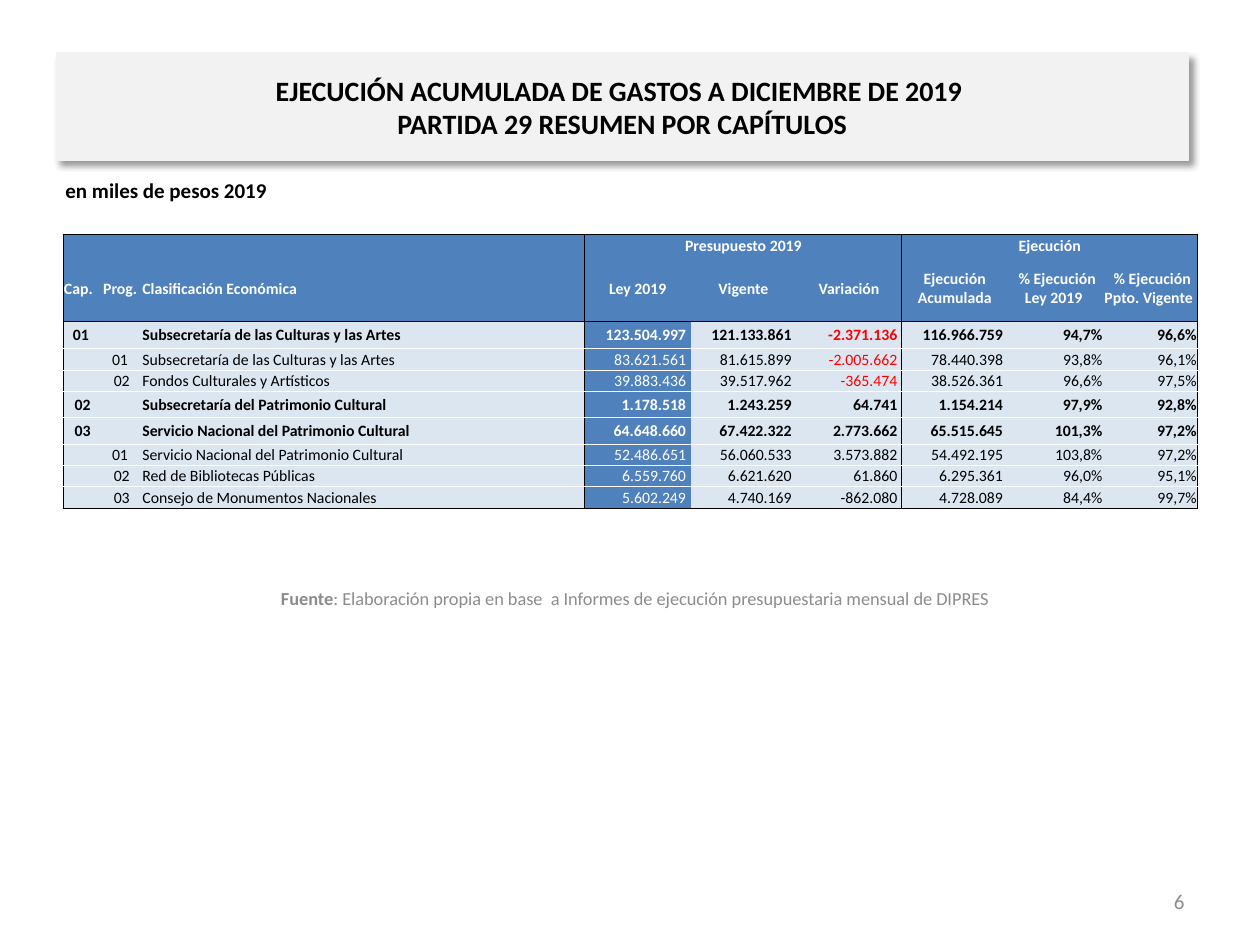
from typing import NamedTuple

from lxml.etree import SubElement, fromstring
from pptx import Presentation
from pptx.dml.color import RGBColor as Rgb
from pptx.enum.text import MSO_ANCHOR as Anchor, MSO_AUTO_SIZE as Fit, PP_ALIGN as Align
from pptx.oxml.ns import qn
from pptx.util import Cm, Pt

FONT = "Calibri"
HEX = {
    "black": "000000", "white": "FFFFFF", "red": "FF0000", "gray": "8C8C8C",
    "band": "F2F2F2", "blue": "4F81BD", "pale": "DCE6F1",
}
WIDTHS = [0.79, 0.79, 8.94, 2.13, 2.13, 2.13, 2.13, 1.93, 1.9]
HEAD_ROWS = [0.43, 1.32]
GROUPS = {3: "Presupuesto 2019", 6: "Ejecución"}
HEADS = ["Cap.", "Prog.", "Clasificación Económica", "Ley 2019", "Vigente", "Variación",
         "Ejecución Acumulada", " % Ejecución Ley 2019 ", " % Ejecución Ppto. Vigente "]
SHADOW = """<a:effectLst xmlns:a="http://schemas.openxmlformats.org/drawingml/2006/main">
<a:outerShdw blurRad="50800" dist="38100" dir="2700000" algn="tl" rotWithShape="0">
<a:srgbClr val="000000"><a:alpha val="40000"/></a:srgbClr></a:outerShdw></a:effectLst>"""


class Item(NamedTuple):
    cap: str
    prog: str
    name: str
    sums: list[str]
    rates: list[str]
    tall: float = 0.43
    red: bool = False


class Note(NamedTuple):
    box: tuple[float, float, float, float]
    texts: list[tuple[str, bool]]
    size: float
    color: str
    align: Align
    anchor: Anchor


ITEMS = [
    Item("01 ", "", "Subsecretaría de las Culturas y las Artes",
         ["123.504.997", "121.133.861", "-2.371.136", "116.966.759"], ["94,7%", "96,6%"], 0.56, True),
    Item("", "01 ", "Subsecretaría de las Culturas y las Artes",
         ["83.621.561", "81.615.899", "-2.005.662", "78.440.398"], ["93,8%", "96,1%"], red=True),
    Item("", "02", "Fondos Culturales y Artísticos",
         ["39.883.436", "39.517.962", "-365.474", "38.526.361"], ["96,6%", "97,5%"], red=True),
    Item("02", "", "Subsecretaría del Patrimonio Cultural",
         ["1.178.518", "1.243.259", "64.741", "1.154.214"], ["97,9%", "92,8%"], 0.53),
    Item("03", "", "Servicio Nacional del Patrimonio Cultural",
         ["64.648.660", "67.422.322", "2.773.662", "65.515.645"], ["101,3%", "97,2%"], 0.53),
    Item("", "01 ", "Servicio Nacional del Patrimonio Cultural",
         ["52.486.651", "56.060.533", "3.573.882", "54.492.195"], ["103,8%", "97,2%"]),
    Item("", "02", "Red de Bibliotecas Públicas",
         ["6.559.760", "6.621.620", "61.860", "6.295.361"], ["96,0%", "95,1%"]),
    Item("", "03", "Consejo de Monumentos Nacionales",
         ["5.602.249", "4.740.169", "-862.080", "4.728.089"], ["84,4%", "99,7%"]),
]
NOTES = [
    Note((18.21, 17.65, 5.92, 1.02), [("6", False)], 12, "gray", Align.RIGHT, Anchor.MIDDLE),
    Note((1.07, 3.45, 22.86, 1.27), [("en miles de pesos 2019", True)], 12, "black",
         Align.LEFT, Anchor.TOP),
    Note((1.68, 11.63, 22.25, 0.84),
         [("Fuente", True),
          (": Elaboración propia en base  a Informes de ejecución presupuestaria mensual de DIPRES", False)],
         10.5, "gray", Align.CENTER, Anchor.MIDDLE),
]


def color(name: str) -> Rgb:
    return Rgb.from_string(HEX[name])


def style(run, size: float, tint: str, bold: bool) -> None:
    font = run.font
    font.name, font.size, font.bold = FONT, Pt(size), bold
    font.color.rgb = color(tint)


def add_title(slide) -> None:
    title = slide.shapes.title
    title.left, title.top, title.width, title.height = map(Cm, (1.14, 1.07, 22.81, 2.16))
    title.fill.solid()
    title.fill.fore_color.rgb = color("band")
    title.line.color.rgb = color("band")
    title.line.width = Pt(0.75)
    title._element.spPr.append(fromstring(SHADOW))
    frame = title.text_frame
    frame.text = "EJECUCIÓN ACUMULADA DE GASTOS A DICIEMBRE DE 2019 \vPARTIDA 29 RESUMEN POR CAPÍTULOS"
    frame.auto_size = Fit.NONE
    frame.vertical_anchor = Anchor.MIDDLE
    para = frame.paragraphs[0]
    para.alignment = Align.CENTER
    for run in para.runs:
        style(run, 16, "black", True)


def add_note(slide, note: Note) -> None:
    frame = slide.shapes.add_textbox(*map(Cm, note.box)).text_frame
    frame.word_wrap = True
    frame.vertical_anchor = note.anchor
    para = frame.paragraphs[0]
    para.alignment = note.align
    for text, bold in note.texts:
        run = para.add_run()
        run.text = text
        style(run, note.size, note.color, bold)


def set_edges(cell, row: int, col: int, last: int) -> None:
    """Black lines frame each column group and band; white ones part the items."""
    lead = col in (0, 3, 6)
    close = col in (2, 5, 8) or (row == 0 and col in GROUPS)
    edges = {
        "L": "black" if lead else None,
        "R": "black" if close else None,
        "T": "black" if row in (0, 2) else "white" if row > 2 else None,
        "B": "black" if row in (1, last) else "white" if row > 1 else None,
    }
    props = cell._tc.get_or_add_tcPr()
    for spot, (side, tint) in enumerate(edges.items()):
        line = SubElement(props, qn(f"a:ln{side}"), w=str(Pt(0.5)))
        if tint:
            SubElement(SubElement(line, qn("a:solidFill")), qn("a:srgbClr"), val=HEX[tint])
        else:
            SubElement(line, qn("a:noFill"))
        props.insert(spot, line)


def set_cell(cell, text: str, fill: str, tint: str, bold: bool, align: Align,
             anchor: Anchor = Anchor.MIDDLE) -> None:
    cell.margin_left = cell.margin_right = cell.margin_top = Cm(0.02)
    cell.margin_bottom = 0
    cell.vertical_anchor = anchor
    cell.fill.solid()
    cell.fill.fore_color.rgb = color(fill)
    para = cell.text_frame.paragraphs[0]
    para.text = text
    para.alignment = align
    for run in para.runs:
        style(run, 9, tint, bold)
    if not text:
        SubElement(para._p, qn("a:endParaRPr"), sz="900")


def add_grid(slide) -> None:
    heights = HEAD_ROWS + [item.tall for item in ITEMS]
    count = len(heights)
    grid = slide.shapes.add_table(count, len(WIDTHS), Cm(1.27), Cm(4.72),
                                  Cm(sum(WIDTHS)), Cm(sum(heights))).table
    for column, width in zip(grid.columns, WIDTHS):
        column.width = Cm(width)
    for row, height in zip(grid.rows, heights):
        row.height = Cm(height)

    for col, head in enumerate(HEADS):
        align = Align.LEFT if col < 3 else Align.CENTER
        set_cell(grid.cell(0, col), GROUPS.get(col, ""), "blue", "white", True, Align.CENTER, Anchor.BOTTOM)
        set_cell(grid.cell(1, col), head, "blue", "white", True, align)
    for col in GROUPS:
        grid.cell(0, col).merge(grid.cell(0, col + 2))

    aligns = [Align.CENTER] * 2 + [Align.JUSTIFY] + [Align.RIGHT] * 6
    for row, item in enumerate(ITEMS, len(HEAD_ROWS)):
        texts = [item.cap, item.prog, item.name, *(f"{num} " for num in item.sums), *item.rates]
        for col, text in enumerate(texts):
            tint = "white" if col == 3 else "red" if col == 5 and item.red else "black"
            fill = "blue" if col == 3 else "pale"
            set_cell(grid.cell(row, col), text, fill, tint, bool(item.cap), aligns[col])

    for row in range(count):
        for col in range(len(WIDTHS)):
            set_edges(grid.cell(row, col), row, col, count - 1)


def main() -> None:
    deck = Presentation()
    deck.slide_width, deck.slide_height = Cm(25.4), Cm(19.05)
    slide = deck.slides.add_slide(deck.slide_layouts[5])
    add_title(slide)
    for note in NOTES:
        add_note(slide, note)
    add_grid(slide)
    deck.save("out.pptx")


if __name__ == "__main__":
    main()
